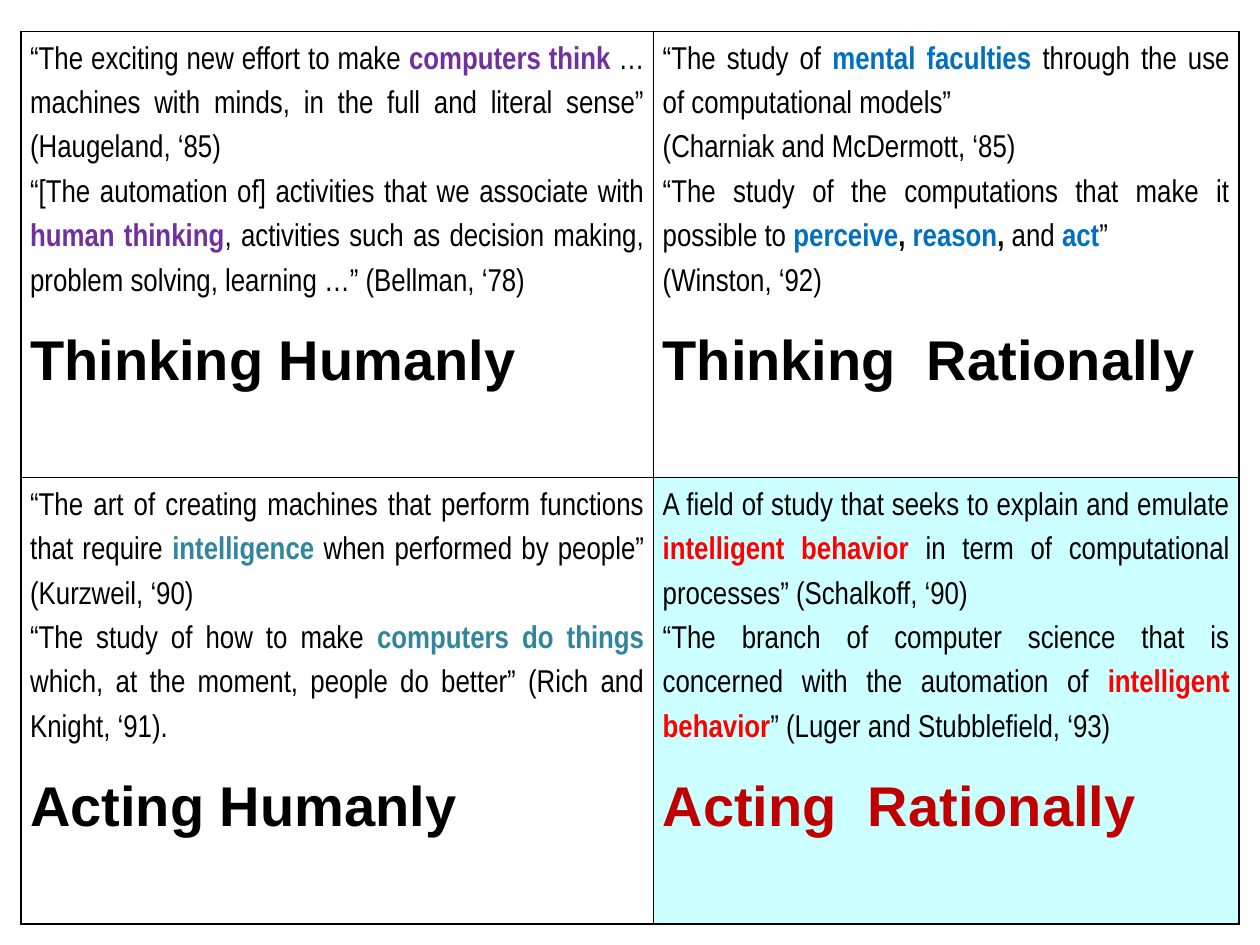
import pptx
import pptx.util
import pptx.dml.color
import pptx.enum.text
import pptx.oxml
import pptx.oxml.ns

Pt = pptx.util.Pt


def color(code):
    return pptx.dml.color.RGBColor.from_string(code)


def write(para, text, font="Arial Narrow", size=18, bold=False, ink="000000", accent="000000"):
    """Add text to a paragraph; parts between asterisks are bold, in the accent colour."""
    para.alignment = pptx.enum.text.PP_ALIGN.JUSTIFY
    para.line_spacing = 1.5
    for i, part in enumerate(text.split("*")):
        if not part:
            continue
        strong = i % 2 == 1
        run = para.add_run()
        run.text = part
        run.font.name = font
        run.font.size = Pt(size)
        run.font.bold = bold or strong
        # Bold commas between accented words stay in the plain ink
        run.font.color.rgb = color(accent if strong and part != ", " else ink)


# Quotes, accent, heading, heading colour and fill of each cell
grid = [
    [
        (["“The exciting new effort to make *computers think *… machines with minds, "
          "in the full and literal sense” (Haugeland, ‘85)",
          "“[The automation of] activities that we associate with *human thinking*, "
          "activities such as decision making, problem solving, learning …” (Bellman, ‘78)"],
         "7030A0", "Thinking Humanly", "000000", None),
        (["“The study of *mental faculties *through the use of computational models”",
          "(Charniak and McDermott, ‘85)",
          "“The study of the computations that make it possible to "
          "*perceive**, **reason**, *and *act*”",
          "(Winston, ‘92)"],
         "0070C0", "Thinking  Rationally", "000000", None),
    ],
    [
        (["“The art of creating machines that perform functions that require "
          "*intelligence* when performed by people” (Kurzweil, ‘90)",
          "“The study of how to make *computers do things* which, at the moment, "
          "people do better” (Rich and Knight, ‘91). "],
         "31859C", "Acting Humanly", "000000", None),
        (["A field of study that seeks to explain and emulate *intelligent behavior *"
          "in term of computational processes” (Schalkoff, ‘90)",
          "“The branch of computer science that is concerned with the automation of "
          "*intelligent behavior*” (Luger and Stubblefield, ‘93) "],
         "FF0000", "Acting  Rationally", "C00000", "CCFFFF"),
    ],
]

# Slide
deck = pptx.Presentation()
deck.slide_width, deck.slide_height = Pt(720), Pt(540)
slide = deck.slides.add_slide(deck.slide_layouts[6])

# Table
widths = [361.5, 334.5]
high = 255
table = slide.shapes.add_table(2, 2, Pt(12), Pt(18), Pt(sum(widths)), Pt(2 * high)).table
table.first_row = table.horz_banding = False
for col, wide in zip(table.columns, widths):
    col.width = Pt(wide)
for row in table.rows:
    row.height = Pt(high)

for r, line in enumerate(grid):
    for c, (quotes, accent, head, ink, fill) in enumerate(line):
        cell = table.cell(r, c)
        cell.margin_left = cell.margin_right = Pt(5.25)
        cell.margin_top = cell.margin_bottom = Pt(0)

        # Borders
        props = cell._tc.get_or_add_tcPr()
        for side in ("lnL", "lnR", "lnT", "lnB"):
            props.append(pptx.oxml.parse_xml(
                f'<a:{side} {pptx.oxml.ns.nsdecls("a")} w="{Pt(1)}"><a:solidFill>'
                f'<a:srgbClr val="000000"/></a:solidFill></a:{side}>'))

        # Fill
        if fill:
            cell.fill.solid()
            cell.fill.fore_color.rgb = color(fill)
        else:
            cell.fill.background()

        # Quotes, then the heading
        frame = cell.text_frame
        for i, quote in enumerate(quotes):
            para = frame.add_paragraph() if i else frame.paragraphs[0]
            write(para, quote, accent=accent)
        write(frame.add_paragraph(), head, font="Arial", size=32, bold=True, ink=ink)

deck.save("out.pptx")
